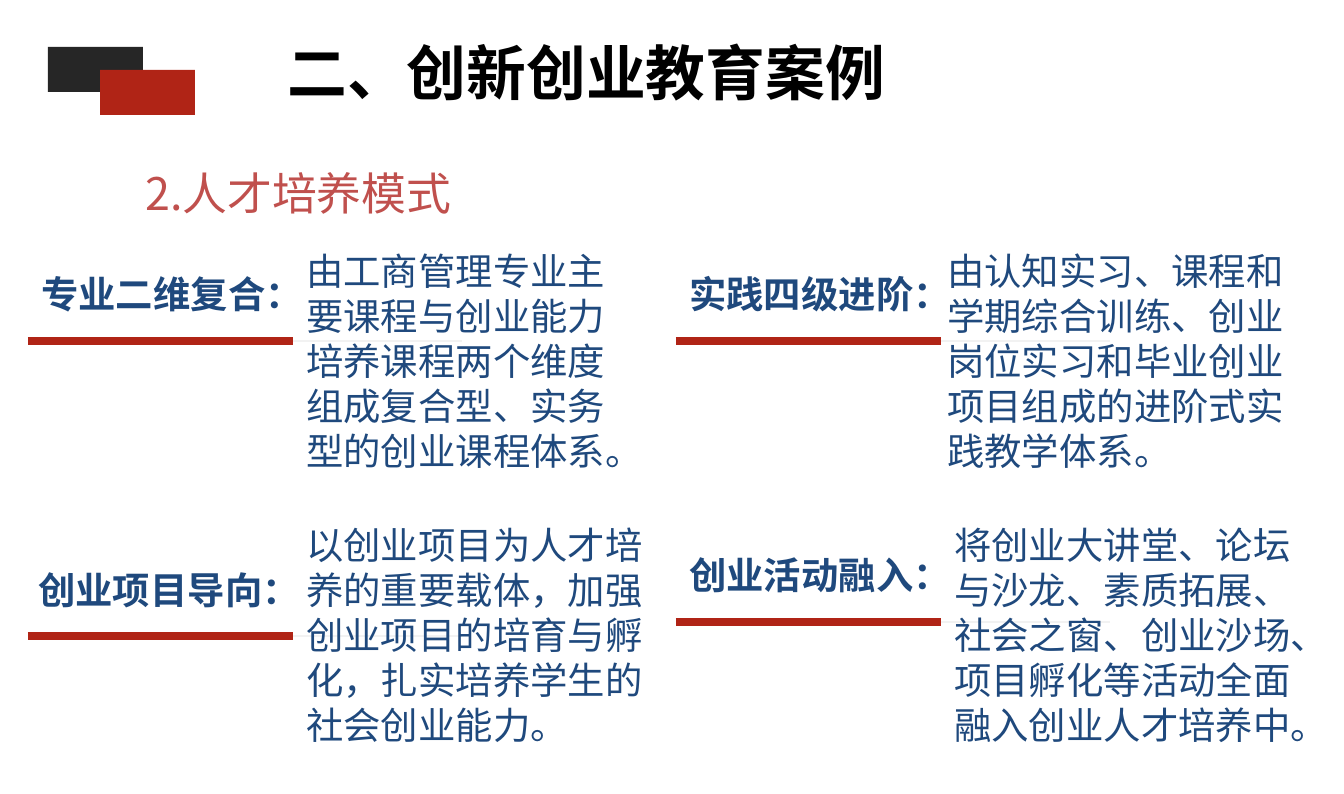
from dataclasses import dataclass

from lxml import etree
from pptx import Presentation
from pptx.dml.color import RGBColor
from pptx.enum.shapes import MSO_CONNECTOR, MSO_SHAPE
from pptx.enum.text import MSO_ANCHOR, MSO_AUTO_SIZE, PP_ALIGN
from pptx.oxml.ns import qn
from pptx.shapes.base import BaseShape
from pptx.slide import Slide
from pptx.util import Emu, Pt

STRAIGHT = MSO_CONNECTOR.STRAIGHT
RECTANGLE = MSO_SHAPE.RECTANGLE
TOP = MSO_ANCHOR.TOP
NO_AUTO_SIZE = MSO_AUTO_SIZE.NONE
LEFT = PP_ALIGN.LEFT

EMU_PER_PX = 914400 / 134.4
TITLE_ONLY_LAYOUT = 5
FONT_NAME = "Noto Sans CJK SC"
LINE_HEIGHT = 1.2
NAVY = "1F497D"
RED = "B02416"
ROSE = "C0504D"
PALE_GRAY = "F2F2F2"
CHARCOAL = "262626"
BLACK = "000000"
LONG_RULE = 434
SHORT_RULE = 265


@dataclass(frozen=True)
class Box:
    left: int
    top: int
    width: int
    height: int


@dataclass(frozen=True)
class Topic:
    heading: str
    heading_box: Box
    rule_left: int
    rule_top: int
    body: str
    body_box: Box


TOPICS = [
    Topic("专业二维复合：", Box(28, 265, 352, 59), 28, 341,
          "由工商管理专业主要课程与创业能力培养课程两个维度组成复合型、实务型的创业课程体系。",
          Box(293, 242, 348, 239)),
    Topic("实践四级进阶：", Box(676, 265, 352, 59), 676, 341,
          "由认知实习、课程和学期综合训练、创业岗位实习和毕业创业项目组成的进阶式实践教学体系。",
          Box(934, 242, 382, 239)),
    Topic("创业项目导向：", Box(25, 561, 352, 59), 28, 636,
          "以创业项目为人才培养的重要载体，加强创业项目的培育与孵化，扎实培养学生的社会创业能力。",
          Box(293, 516, 383, 239)),
    Topic("创业活动融入：", Box(676, 546, 352, 59), 676, 622,
          "将创业大讲堂、论坛与沙龙、素质拓展、社会之窗、创业沙场、项目孵化等活动全面融入创业人才培养中。",
          Box(941, 516, 368, 239)),
]


def px(length: int) -> Emu:
    return Emu(round(length * EMU_PER_PX))


def color(value: str) -> RGBColor:
    return RGBColor.from_string(value)


def place(shape: BaseShape, box: Box) -> None:
    shape.left, shape.top = px(box.left), px(box.top)
    shape.width, shape.height = px(box.width), px(box.height)


def write_text(shape: BaseShape, text: str, size: int, fill: str, bold: bool = False) -> None:
    frame = shape.text_frame
    frame.text = text
    frame.word_wrap = True
    frame.auto_size = NO_AUTO_SIZE
    frame.vertical_anchor = TOP
    paragraph = frame.paragraphs[0]
    paragraph.alignment = LEFT
    paragraph.line_spacing = Pt(round(size * LINE_HEIGHT))
    paragraph.space_before = Pt(0)
    font = paragraph.runs[0].font
    font.size = Pt(size)
    font.bold = bold
    font.color.rgb = color(fill)
    font.name = FONT_NAME
    latin = font._element.find(qn("a:latin"))
    east_asian = etree.Element(qn("a:ea"), typeface=FONT_NAME)
    latin.addnext(east_asian)


def add_text(slide: Slide, box: Box, text: str, size: int, fill: str, bold: bool = False) -> None:
    shape = slide.shapes.add_textbox(0, 0, 0, 0)
    place(shape, box)
    write_text(shape, text, size, fill, bold)


def add_rule(slide: Slide, left: int, top: int, length: int, fill: str, weight: float) -> None:
    rule = slide.shapes.add_connector(STRAIGHT, px(left), px(top), px(left + length), px(top))
    rule.line.color.rgb = color(fill)
    rule.line.width = Pt(weight)
    etree.SubElement(rule._element.spPr, qn("a:effectLst"))


def add_block(slide: Slide, box: Box, fill: str) -> None:
    shape = slide.shapes.add_shape(RECTANGLE, 0, 0, 0, 0)
    place(shape, box)
    shape.shadow.inherit = False
    shape.fill.solid()
    shape.fill.fore_color.rgb = color(fill)
    shape.line.fill.background()


def add_topic(slide: Slide, topic: Topic) -> None:
    add_rule(slide, topic.rule_left, topic.rule_top, LONG_RULE, PALE_GRAY, 0.75)
    add_rule(slide, topic.rule_left, topic.rule_top, SHORT_RULE, RED, 4)
    add_text(slide, topic.heading_box, topic.heading, 20, NAVY, bold=True)
    add_text(slide, topic.body_box, topic.body, 20, NAVY)


def main() -> None:
    presentation = Presentation()
    presentation.slide_width = px(1344)
    presentation.slide_height = px(794)
    slide = presentation.slides.add_slide(presentation.slide_layouts[TITLE_ONLY_LAYOUT])

    title = slide.shapes.title
    place(title, Box(274, 30, 632, 86))
    write_text(title, "二、创新创业教育案例", 32, BLACK, bold=True)

    add_text(slide, Box(132, 159, 543, 67), "2.人才培养模式", 24, ROSE)
    for topic in TOPICS:
        add_topic(slide, topic)

    add_block(slide, Box(48, 47, 95, 45), CHARCOAL)
    add_block(slide, Box(100, 70, 95, 45), RED)
    presentation.save("out.pptx")


if __name__ == "__main__":
    main()
